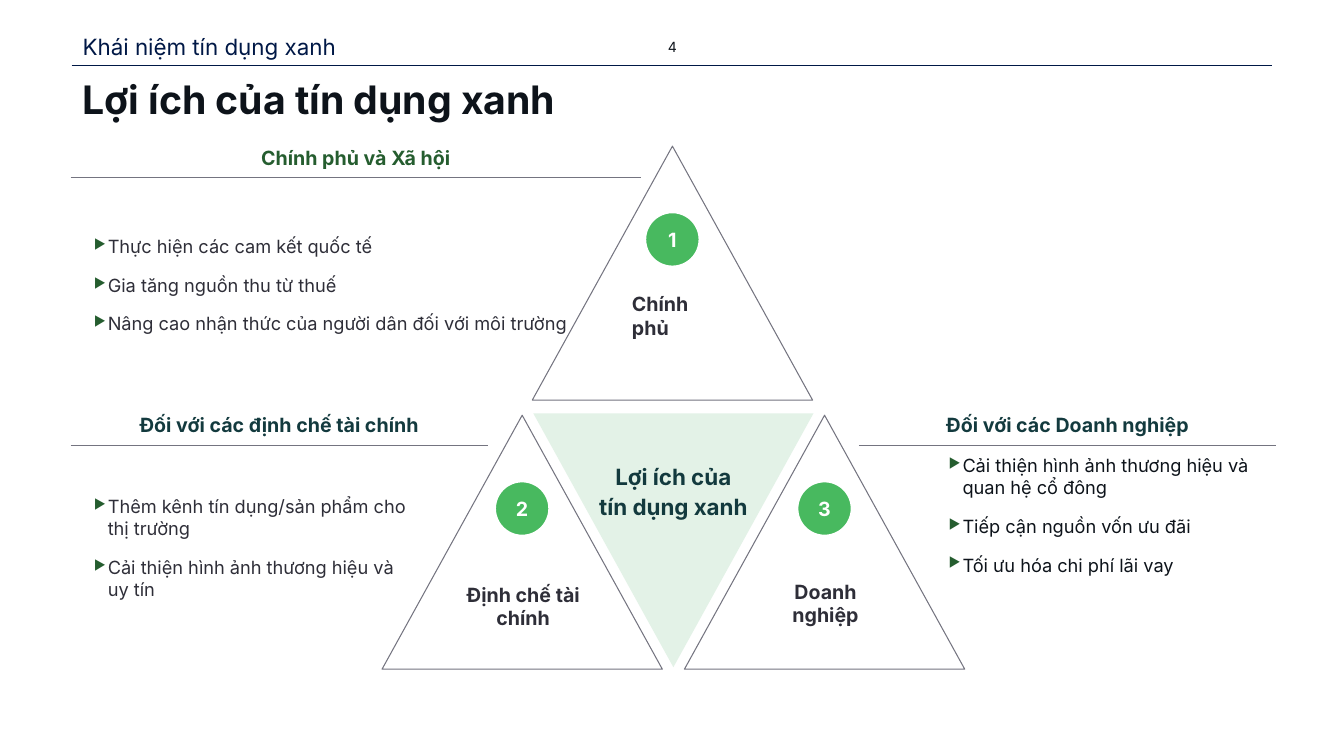
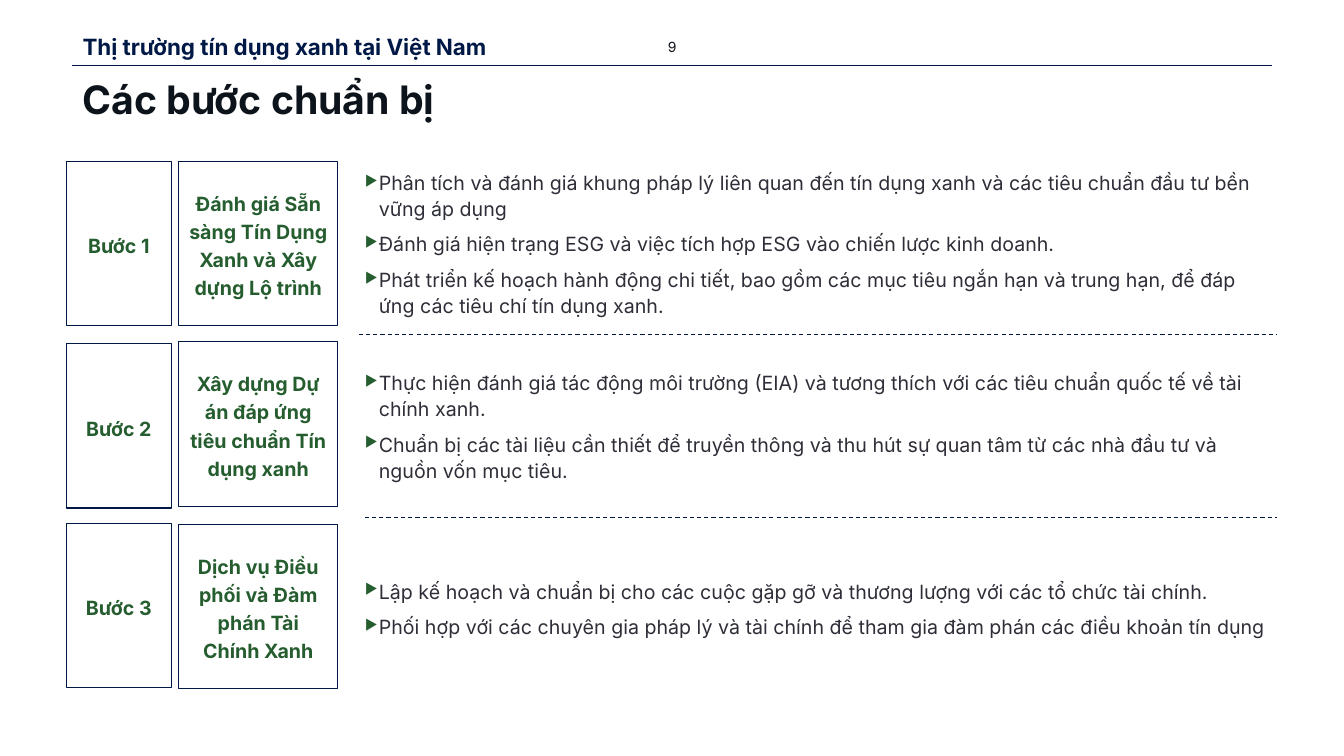
"""Build two slides on green credit: its benefits and the steps to prepare."""
from lxml import etree
from pptx import Presentation
from pptx.dml.color import RGBColor
from pptx.enum import dml, shapes, text
from pptx.oxml import ns
from pptx.util import Pt

NAVY = RGBColor(0x00, 0x18, 0x46)
INK = RGBColor(0x0D, 0x13, 0x1A)
DARK = RGBColor(0x2E, 0x2E, 0x38)
GREY = RGBColor(0x74, 0x74, 0x80)
TEAL = RGBColor(0x13, 0x3A, 0x3E)
GREEN = RGBColor(0x25, 0x5D, 0x2F)
LEAF = RGBColor(0x48, 0xB9, 0x5F)
MINT = RGBColor(0xE3, 0xF2, 0xE7)
WHITE = RGBColor(0xFF, 0xFF, 0xFF)
FONT = "Inter"
LEFT, MID = text.PP_ALIGN.LEFT, text.PP_ALIGN.CENTER
TOP, CORE = text.MSO_ANCHOR.TOP, text.MSO_ANCHOR.MIDDLE
KIND = shapes.MSO_SHAPE

PEAK_W, PEAK_H, DOT = 200.2, 181.4, 38.9
PEAKS = [
    (380.2, 104.4, "Chính phủ", (451.4, 208.8, 65), LEFT),
    (272.9, 296.6, "Định chế tài chính", (318.7, 416.2, 110), MID),
    (488.9, 296.6, "Doanh nghiệp", (549.7, 414, 80), MID),
]
CORE_TEXT = ["Lợi ích của", "tín dụng xanh"]
HEADS = [
    ("Chính phủ và Xã hội", 50.4, 104.4, 407.5, GREEN),
    ("Đối với các định chế tài chính", 50.4, 295.2, 298.1, TEAL),
    ("Đối với các Doanh nghiệp", 613.5, 295.2, 298.1, TEAL),
]
GAINS = [
    ((67, 168.1, 352, 80), DARK, [
        "Thực hiện các cam kết quốc tế",
        "Gia tăng nguồn thu từ thuế",
        "Nâng cao nhận thức của người dân đối với môi trường"]),
    ((67, 353.9, 231.8, 128), DARK, [
        "Thêm kênh tín dụng/sản phẩm cho thị trường",
        "Cải thiện hình ảnh thương hiệu và uy tín"]),
    ((677.5, 324.7, 226, 143), INK, [
        "Cải thiện hình ảnh thương hiệu và quan hệ cổ đông",
        "Tiếp cận nguồn vốn ưu đãi",
        "Tối ưu hóa chi phí lãi vay"]),
]
STEPS = [
    ("Đánh giá Sẵn sàng Tín Dụng Xanh và Xây dựng Lộ trình", 115.2, 115.2, 173.5, [
        "Phân tích và đánh giá khung pháp lý liên quan đến tín dụng xanh và "
        "các tiêu chuẩn đầu tư bền vững áp dụng",
        "Đánh giá hiện trạng ESG và việc tích hợp ESG vào chiến lược kinh doanh.",
        "Phát triển kế hoạch hành động chi tiết, bao gồm các mục tiêu ngắn hạn "
        "và trung hạn, để đáp ứng các tiêu chí tín dụng xanh."]),
    ("Xây dựng Dự án đáp ứng tiêu chuẩn Tín dụng xanh", 245.5, 244.1, 303.8, [
        "Thực hiện đánh giá tác động môi trường (EIA) và tương thích với các "
        "tiêu chuẩn quốc tế về tài chính xanh.",
        "Chuẩn bị các tài liệu cần thiết để truyền thông và thu hút sự quan "
        "tâm từ các nhà đầu tư và nguồn vốn mục tiêu."]),
    ("Dịch vụ Điều phối và Đàm phán Tài Chính Xanh", 373.7, 374.4, 434.2, [
        "Lập kế hoạch và chuẩn bị cho các cuộc gặp gỡ và thương lượng với các "
        "tổ chức tài chính.",
        "Phối hợp với các chuyên gia pháp lý và tài chính để tham gia đàm phán "
        "các điều khoản tín dụng"]),
]
STEP_H, LIST_H = 117.4, 120
CUTS = [(256.3, 239), (260.6, 369.4)]
EDGE = 912.2


def write(shape, lines, size, color, bold=False, align=LEFT, anchor=TOP,
          pad=(0, 0, 0, 0), wrap=True, lead=1.0):
    """Fill a shape with styled lines; pad is left, top, right, bottom."""
    frame = shape.text_frame
    frame.text = "\n".join(lines)
    frame.word_wrap = wrap
    frame.auto_size = text.MSO_AUTO_SIZE.NONE
    frame.vertical_anchor = anchor
    (frame.margin_left, frame.margin_top,
     frame.margin_right, frame.margin_bottom) = map(Pt, pad)
    for para in frame.paragraphs:
        para.alignment, para.line_spacing = align, lead
        para.space_before = Pt(0)
        for run in para.runs:
            font = run.font
            font.name, font.size, font.bold = FONT, Pt(size), bold
            font.color.rgb = color


def place(shape, *spot):
    """Move and size a shape."""
    shape.left, shape.top, shape.width, shape.height = map(Pt, spot)
    return shape


def label(slide, spot, *args, **style):
    """Add a text box."""
    write(slide.shapes.add_textbox(*map(Pt, spot)), *args, **style)


def bullets(slide, spot, items, size, color, before, after, **style):
    """Add a list with green arrow bullets."""
    box = slide.shapes.add_textbox(*map(Pt, spot))
    write(box, items, size, color, **style)
    for num, para in enumerate(box.text_frame.paragraphs):
        para.space_before, para.space_after = Pt(before if num else 0), Pt(after)
        props = para._p.get_or_add_pPr()
        props.set("marL", str(Pt(10)))
        props.set("indent", str(Pt(-10)))
        tint = etree.SubElement(props, ns.qn("a:buClr"))
        etree.SubElement(tint, ns.qn("a:srgbClr")).set("val", str(GREEN))
        etree.SubElement(props, ns.qn("a:buSzPct")).set("val", "75000")
        etree.SubElement(props, ns.qn("a:buChar")).set("char", "▶")


def draw(slide, kind, spot, fill=None, edge=None, width=0.75):
    """Add a preset shape with a plain fill and edge."""
    shape = slide.shapes.add_shape(kind, *map(Pt, spot))
    shape.shadow.inherit = False
    for part, color in ((shape.fill, fill), (shape.line.fill, edge)):
        if color is None:
            part.background()
        else:
            part.solid()
            part.fore_color.rgb = color
    if edge is not None:
        shape.line.width = Pt(width)
    return shape


def rule(slide, left, right, y, color, width=0.75, dash=False):
    """Add a level line."""
    line = slide.shapes.add_connector(
        shapes.MSO_CONNECTOR.STRAIGHT, Pt(left), Pt(y), Pt(right), Pt(y))
    line.line.color.rgb, line.line.width = color, Pt(width)
    if dash:
        line.line.dash_style = dml.MSO_LINE.DASH
    etree.SubElement(line._element.spPr, ns.qn("a:effectLst"))


def start(deck, title, topic, page, bold=False):
    """Add a slide with topic, page number, rule and title."""
    slide = deck.slides.add_slide(deck.slide_layouts[1])
    pad = (7.2, 3.6, 7.2, 3.6)
    rule(slide, 51.1, 908.6, 46.4, NAVY, 0.5)
    label(slide, (442.8, 22.3, 74.9, 22.3), [page], 10, INK,
          align=MID, anchor=CORE, pad=pad)
    head = place(slide.shapes.title, 51.8, 54, 858.2, 64.1)
    write(head, [title], 28, INK, True, pad=pad, lead=0.9)
    body = place(slide.placeholders[1], 51.8, 22.3, 381.6, 22.3)
    write(body, [topic], 16, NAVY, bold, pad=pad, lead=0.9)
    props = body.text_frame.paragraphs[0]._p.get_or_add_pPr()
    props.set("marL", "0")
    props.set("indent", "0")
    etree.SubElement(props, ns.qn("a:buNone"))
    return slide


def benefits(deck):
    """Build the triangle slide."""
    slide = start(deck, "Lợi ích của tín dụng xanh", "Khái niệm tín dụng xanh", "4")
    core = draw(slide, KIND.FLOWCHART_MERGE, (380.9, 295.2, PEAK_W, PEAK_H), MINT)
    write(core, CORE_TEXT, 16, TEAL, True, MID, CORE, (5, 24, 5, 5), False, 1.1)
    for num, (x, y, name, (left, top, width), align) in enumerate(PEAKS, 1):
        draw(slide, KIND.ISOSCELES_TRIANGLE, (x, y, PEAK_W, PEAK_H), WHITE, GREY)
        spot = (x + (PEAK_W - DOT) / 2, y + 47.2, DOT, DOT)
        dot = draw(slide, KIND.OVAL, spot, LEAF, WHITE, 1.5)
        write(dot, [str(num)], 14, WHITE, True, MID, CORE, wrap=False)
        label(slide, (left, top, width, 36), [name], 14, DARK, True, align)
    for name, x, y, width, color in HEADS:
        label(slide, (x, y, width, 23), [name], 14, color, True, MID)
        rule(slide, x, x + width, y + 22.7, GREY)
    for spot, color, items in GAINS:
        bullets(slide, spot, items, 13, color, 6, 6)


def steps(deck):
    """Build the three-step slide."""
    slide = start(deck, "Các bước chuẩn bị",
                  "Thị trường tín dụng xanh tại Việt Nam", "9", True)
    for num, (name, top, side, mid, items) in enumerate(STEPS, 1):
        for words, x, y, width in ((f"Bước {num}", 47.5, top, 74.9),
                                   (name, 127.8, side, 113.4)):
            box = draw(slide, KIND.RECTANGLE, (x, y, width, STEP_H), None, NAVY)
            write(box, [words], 14, GREEN, True, MID, CORE, (5.8, 0, 5.8, 0), lead=1.2)
        bullets(slide, (260.6, mid - LIST_H / 2, EDGE - 260.6, LIST_H), items,
                14, DARK, 7, 0, anchor=CORE, lead=1.1)
    for left, y in CUTS:
        rule(slide, left, EDGE, y, NAVY, dash=True)


def main():
    """Build and save the deck."""
    deck = Presentation()
    deck.slide_width, deck.slide_height = Pt(960), Pt(540)
    benefits(deck)
    steps(deck)
    deck.save("out.pptx")


if __name__ == "__main__":
    main()
